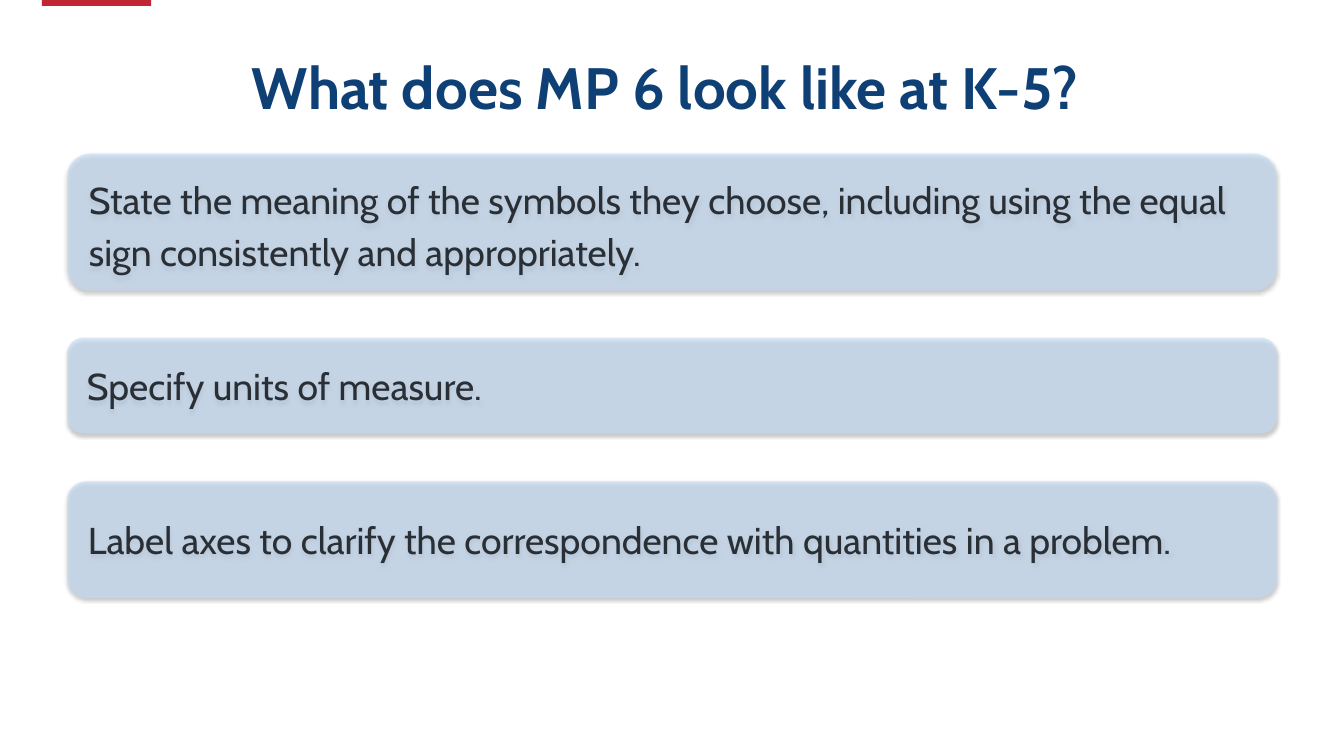
from lxml import etree
from pptx import Presentation
from pptx.dml.color import RGBColor
from pptx.enum.shapes import MSO_SHAPE
from pptx.enum.text import MSO_ANCHOR, MSO_AUTO_SIZE, PP_ALIGN
from pptx.oxml.ns import qn
from pptx.util import Pt

TITLE = "What does MP 6 look like at K-5? "
PRACTICES = [
    ("State the meaning of the symbols they choose, including using the equal "
     "sign consistently and appropriately.", 131.8, 117.4, 1.15),
    ("Specify units of measure.", 289.4, 82.1, 1.0),
    ("Label axes to clarify the correspondence with quantities in a problem.",
     412.6, 100.1, 1.0),
]

FONT = "Cabin"
RED = RGBColor(0xC1, 0x26, 0x37)
NAVY = RGBColor(0x0E, 0x3F, 0x75)
PALE_BLUE = RGBColor(0xC1, 0xDB, 0xF7)
INK = RGBColor(0x2A, 0x2F, 0x36)
RECT, ROUNDED = MSO_SHAPE.RECTANGLE, MSO_SHAPE.ROUNDED_RECTANGLE
LEFT, CENTER = PP_ALIGN.LEFT, PP_ALIGN.CENTER
TOP, MIDDLE = MSO_ANCHOR.TOP, MSO_ANCHOR.MIDDLE
SLIDE_W, SLIDE_H = 1152, 648
CARD_X = 57.6


def add_block(slide, kind, x, y, w, h, color):
    s = slide.shapes.add_shape(kind, Pt(x), Pt(y), Pt(w), Pt(h))
    s.shadow.inherit = False
    s.fill.solid()
    s.fill.fore_color.rgb = color
    s.line.fill.background()
    return s


def set_alpha(color_el, percent):
    etree.SubElement(color_el, qn("a:alpha"), val=str(percent * 1000))


def soften(s):
    sp = s._element.spPr
    set_alpha(sp.find(qn("a:solidFill"))[0], 60)
    shadow = etree.SubElement(
        sp.find(qn("a:effectLst")), qn("a:outerShdw"),
        blurRad=str(Pt(3.1)), dist=str(Pt(1.8)), dir="5400000", rotWithShape="0")
    set_alpha(etree.SubElement(shadow, qn("a:srgbClr"), val="000000"), 35)


def write(tf, text, size, color, align, spacing, bold=False):
    tf.word_wrap = True
    tf.auto_size = MSO_AUTO_SIZE.NONE
    p = tf.paragraphs[0]
    p.text = text
    p.alignment = align
    p.line_spacing = spacing
    p.space_before = Pt(0)
    p.font.name = FONT
    p.font.size = Pt(size)
    p.font.bold = bold
    p.font.color.rgb = color
    return p


def main():
    prs = Presentation()
    prs.slide_width, prs.slide_height = Pt(SLIDE_W), Pt(SLIDE_H)
    slide = prs.slides.add_slide(prs.slide_layouts[5])

    add_block(slide, RECT, 36, 0, 93.6, 5, RED)

    title = slide.shapes.title
    title.left, title.top = Pt(0), Pt(46.1)
    title.width, title.height = Pt(SLIDE_W), Pt(90.7)
    tf = title.text_frame
    tf.margin_left = tf.margin_right = Pt(8.64)
    tf.margin_top = tf.margin_bottom = Pt(4.32)
    tf.vertical_anchor = TOP
    write(tf, TITLE, 50, NAVY, CENTER, 0.9, True)

    for text, y, h, spacing in PRACTICES:
        card = add_block(slide, ROUNDED, CARD_X, y, SLIDE_W - 2 * CARD_X, h, PALE_BLUE)
        soften(card)
        card.text_frame.vertical_anchor = MIDDLE
        p = write(card.text_frame, text, 32, INK, LEFT, spacing)
        p._p.get_or_add_pPr().set("marL", str(Pt(5.76)))

    prs.save("out.pptx")


if __name__ == "__main__":
    main()
